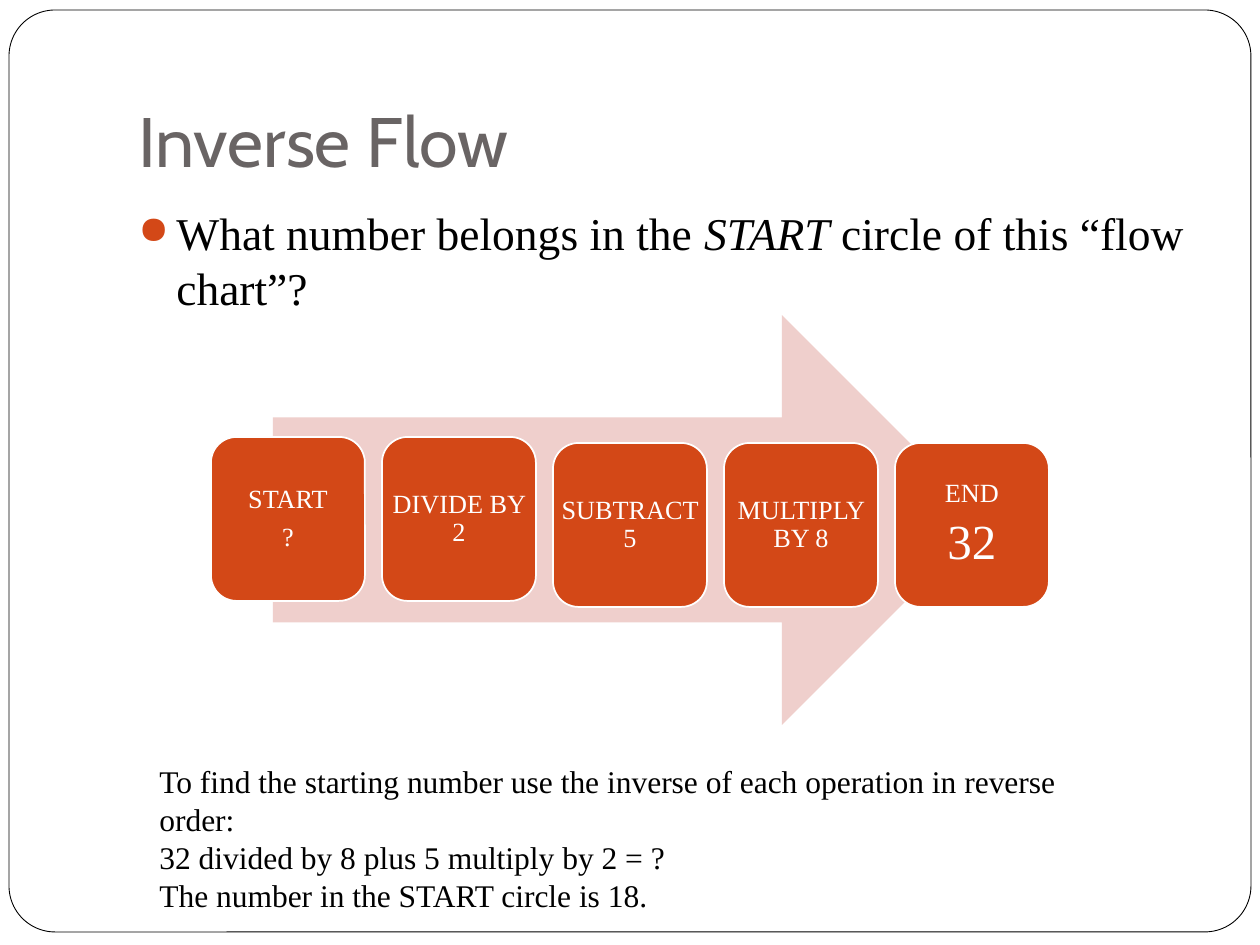
from lxml.etree import SubElement
from pptx import Presentation
from pptx.dml.color import RGBColor
from pptx.enum.shapes import MSO_SHAPE
from pptx.enum.text import MSO_ANCHOR, MSO_AUTO_SIZE, PP_ALIGN
from pptx.oxml.ns import qn
from pptx.util import Pt

PX = 914400 / 126
COLORS = {
    "white": "FFFFFF",
    "black": "000000",
    "title": "696464",
    "accent": "D34817",
    "arrow": "EFCFCC",
}
SERIF = "Times New Roman"
STEPS = [
    (437, [("START", 15), ("?", 15)]),
    (437, [("DIVIDE BY 2", 15)]),
    (443, [("SUBTRACT 5", 15)]),
    (443, [("MULTIPLY BY 8", 15)]),
    (443, [("END", 15), ("32", 28)]),
]
ANSWER = [
    "To find the starting number use the inverse of each operation in reverse order:",
    "32 divided by 8 plus 5 multiply by 2 = ?",
    "The number in the START circle is 18.",
]


def px(n):
    return round(n * PX)


def rgb(name):
    return RGBColor.from_string(COLORS[name])


def set_attrs(obj, **values):
    for key, value in values.items():
        setattr(obj, key, value)


def add_run(p, text, size, color="black", font=SERIF, italic=False):
    r = p.add_run()
    r.text = text
    set_attrs(r.font, size=Pt(size), name=font, italic=italic)
    r.font.color.rgb = rgb(color)


def add_shape(s, kind, box, fill, line=None, width=1, adj=None):
    sp = s.shapes.add_shape(kind, *map(px, box))
    sp.shadow.inherit = False
    sp.fill.solid()
    sp.fill.fore_color.rgb = rgb(fill)
    if line:
        sp.line.color.rgb = rgb(line)
        sp.line.width = Pt(width)
    else:
        sp.line.fill.background()
    if adj is not None:
        sp.adjustments[0] = adj
    return sp


def add_textbox(s, box):
    tf = s.shapes.add_textbox(*map(px, box)).text_frame
    tf.word_wrap = True
    return tf


def add_title(s, text):
    sp = s.shapes.title
    set_attrs(sp, left=px(126), top=px(38), width=px(1071), height=px(157))
    tf = sp.text_frame
    set_attrs(tf, vertical_anchor=MSO_ANCHOR.BOTTOM, margin_bottom=px(13),
              auto_size=MSO_AUTO_SIZE.NONE)
    p = tf.paragraphs[0]
    p.alignment = PP_ALIGN.LEFT
    add_run(p, text, 40, "title", "Cabin")


def add_bullet(p, color, size):
    pPr = p._p.get_or_add_pPr()
    pPr.set("marL", str(px(38)))
    pPr.set("indent", str(px(-38)))
    SubElement(SubElement(pPr, qn("a:buClr")), qn("a:srgbClr"), val=COLORS[color])
    SubElement(pPr, qn("a:buSzPct"), val=str(size * 1000))
    SubElement(pPr, qn("a:buChar"), char="●")


def add_question(s):
    p = add_textbox(s, (126, 199, 1071, 630)).paragraphs[0]
    p.space_before = Pt(5.8)
    add_bullet(p, "accent", 85)
    add_run(p, "What number belongs in the ", 26)
    add_run(p, "START", 26, italic=True)
    add_run(p, " circle of this “flow chart”?", 26)


def add_step(s, left, top, lines):
    sp = add_shape(s, MSO_SHAPE.ROUNDED_RECTANGLE, (left, top, 154, 164),
                   "accent", "white")
    tf = sp.text_frame
    set_attrs(tf, word_wrap=True, vertical_anchor=MSO_ANCHOR.MIDDLE,
              margin_left=0, margin_right=0, margin_top=0, margin_bottom=0)
    for i, (text, size) in enumerate(lines):
        p = tf.add_paragraph() if i else tf.paragraphs[0]
        set_attrs(p, alignment=PP_ALIGN.CENTER, line_spacing=0.9,
                  space_after=Pt(size * 0.35))
        add_run(p, text, size, "white")


def add_answer(s):
    tf = add_textbox(s, (147, 756, 945, 127))
    for i, text in enumerate(ANSWER):
        p = tf.add_paragraph() if i else tf.paragraphs[0]
        add_run(p, text, 18)


def main():
    prs = Presentation()
    set_attrs(prs, slide_width=px(1260), slide_height=px(945))
    s = prs.slides.add_slide(prs.slide_layouts[5])
    frame = add_shape(s, MSO_SHAPE.ROUNDED_RECTANGLE, (9, 10, 1242, 922),
                      "white", "black", 0.5, 0.05)
    s.shapes.title._element.addprevious(frame._element)
    add_title(s, "Inverse Flow")
    add_question(s)
    add_shape(s, MSO_SHAPE.RIGHT_ARROW, (273, 315, 714, 410), "arrow")
    for i, (top, lines) in enumerate(STEPS):
        add_step(s, 211 + 171 * i, top, lines)
    add_answer(s)
    prs.save("out.pptx")


if __name__ == "__main__":
    main()
